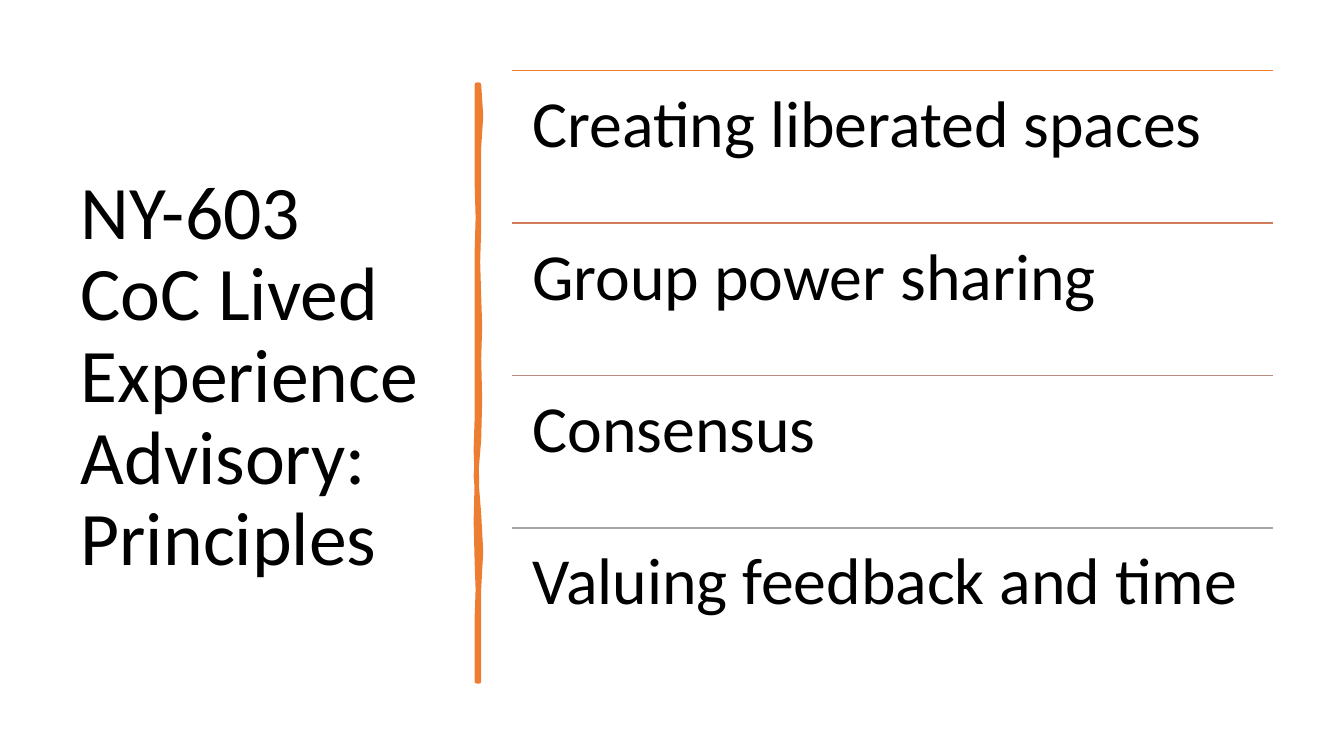
from lxml.etree import SubElement
from pptx import Presentation
from pptx.dml.color import RGBColor
from pptx.enum.shapes import MSO_CONNECTOR
from pptx.enum.text import MSO_ANCHOR, MSO_AUTO_SIZE, PP_ALIGN
from pptx.oxml.ns import qn
from pptx.util import Inches, Pt

BLACK = RGBColor(0x00, 0x00, 0x00)
ORANGE = RGBColor(0xED, 0x7D, 0x31)
COPPER = RGBColor(0xD1, 0x7B, 0x5C)
MAUVE = RGBColor(0xB9, 0x8A, 0x82)
GRAY = RGBColor(0xA5, 0xA5, 0xA5)
FONT = "Calibri"

PRINCIPLES = [
    ("Creating liberated spaces", ORANGE),
    ("Group power sharing", COPPER),
    ("Consensus", MAUVE),
    ("Valuing feedback and time", GRAY),
]
RIGHT_EDGE = [
    (0.04, 0), (0.06, 0.31), (0.04, 0.62), (0.04, 1.42), (0.03, 1.76),
    (0.04, 2.1), (0.05, 2.4), (0.04, 2.72), (0.05, 3.12), (0.04, 3.52),
    (0.01, 3.88), (0.04, 4.26), (0.06, 4.63), (0.04, 5), (0.04, 5.92),
]
LEFT_EDGE = [
    (0.02, 5.92), (0.02, 5.29), (0.03, 5.01), (0.02, 4.73), (0.01, 4.33),
    (0.02, 3.93), (0.01, 3.62), (0.02, 3.31), (0.02, 2.51), (0.02, 1.66),
    (0.03, 1.32), (0.02, 0.97), (0.02, 0),
]


def write(frame, text, size):
    """Fill a text frame with one left-aligned paragraph."""
    frame.word_wrap = True
    frame.auto_size = MSO_AUTO_SIZE.NONE
    frame.text = text
    paragraph = frame.paragraphs[0]
    paragraph.alignment = PP_ALIGN.LEFT
    paragraph.line_spacing = 0.9
    font = paragraph.runs[0].font
    font.name, font.size, font.color.rgb = FONT, Pt(size), BLACK


def place_title(slide, left, top, width, height):
    """Set the slide title in the given box."""
    title = slide.shapes.title
    title.left, title.top = Inches(left), Inches(top)
    title.width, title.height = Inches(width), Inches(height)
    write(title.text_frame, "NY-603 CoC Lived Experience Advisory: Principles", 54)
    title.text_frame.vertical_anchor = MSO_ANCHOR.MIDDLE


def draw_brush_stroke(slide, left, top):
    """Draw the uneven vertical divider from its top-left corner."""
    outline = [(Inches(left + x), Inches(top + y)) for x, y in RIGHT_EDGE + LEFT_EDGE]
    builder = slide.shapes.build_freeform(*outline[0])
    builder.add_line_segments(outline[1:], close=True)
    stroke = builder.convert_to_shape()
    stroke.shadow.inherit = False
    stroke.fill.solid()
    stroke.fill.fore_color.rgb = ORANGE
    stroke.line.color.rgb = ORANGE
    stroke.line.width = Pt(3.25)


def list_principles(slide, left, top, width, height):
    """Stack the principles in equal rows, each under its own rule."""
    row_height = height / len(PRINCIPLES)
    for index, (principle, color) in enumerate(PRINCIPLES):
        row_top = Inches(top + index * row_height)
        rule = slide.shapes.add_connector(
            MSO_CONNECTOR.STRAIGHT, Inches(left), row_top, Inches(left + width), row_top)
        rule.line.color.rgb = color
        rule.line.width = Pt(1)
        SubElement(rule.line._get_or_add_ln().getparent(), qn("a:effectLst"))

        row = slide.shapes.add_textbox(
            Inches(left), row_top, Inches(width), Inches(row_height))
        frame = row.text_frame
        write(frame, principle, 47)
        frame.margin_left = frame.margin_right = Inches(0.2)
        frame.margin_top = frame.margin_bottom = Inches(0.2)


def main():
    """Build the principles slide and save it."""
    deck = Presentation()
    deck.slide_width, deck.slide_height = Inches(13.33), Inches(7.5)
    slide = deck.slides.add_slide(deck.slide_layouts[5])
    place_title(slide, 0.7, 0.7, 3.7, 6.1)
    draw_brush_stroke(slide, 4.71, 0.84)
    list_principles(slide, 5.08, 0.7, 7.55, 6.05)
    deck.save("out.pptx")


if __name__ == "__main__":
    main()
